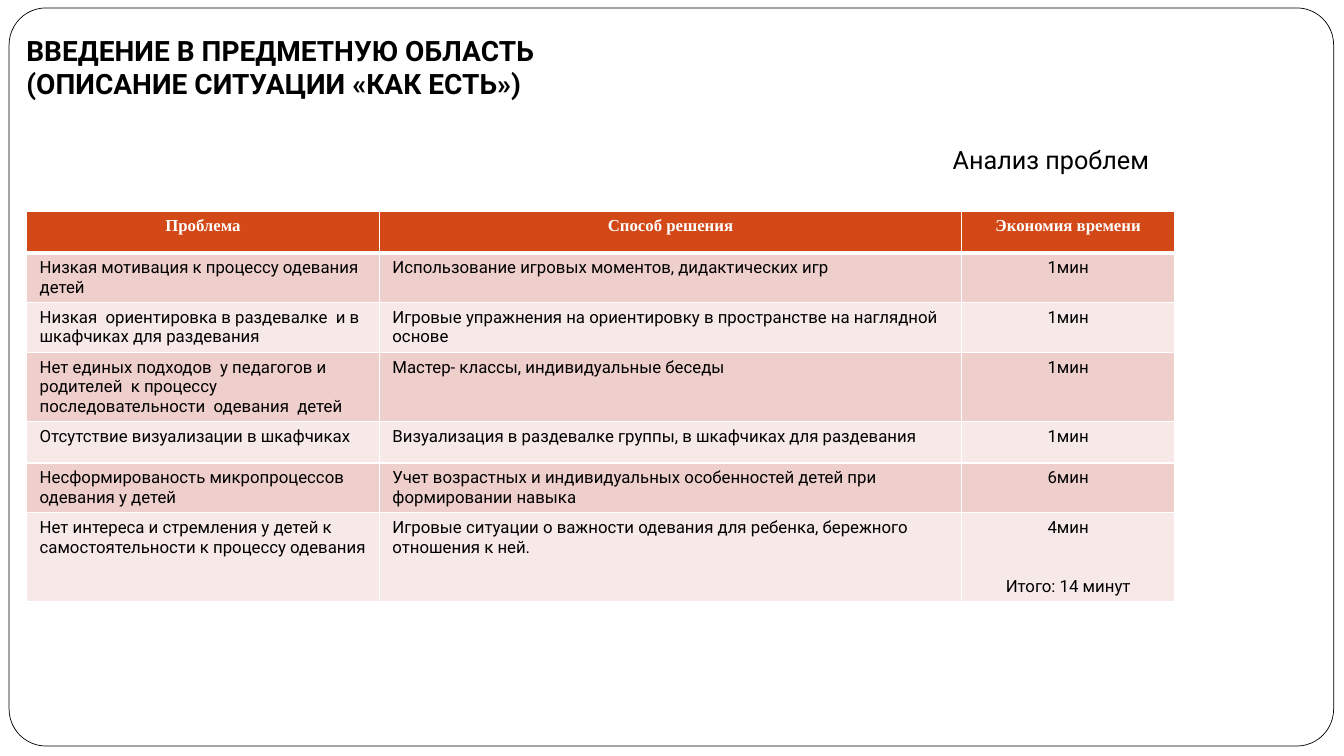
"""Build the slide that lists problems, solutions and time saved."""
from lxml import etree
from pptx import Presentation
from pptx.dml.color import RGBColor
from pptx.enum.shapes import MSO_SHAPE
from pptx.enum.text import MSO_ANCHOR, MSO_AUTO_SIZE, PP_ALIGN
from pptx.oxml.ns import qn
from pptx.util import Cm, Pt

ROUND = MSO_SHAPE.ROUNDED_RECTANGLE
MIDDLE, TOP = MSO_ANCHOR.MIDDLE, MSO_ANCHOR.TOP
NO_FIT = MSO_AUTO_SIZE.NONE
LEFT, CENTER, RIGHT = PP_ALIGN.LEFT, PP_ALIGN.CENTER, PP_ALIGN.RIGHT

TITLE = ["ВВЕДЕНИЕ В ПРЕДМЕТНУЮ ОБЛАСТЬ", "(ОПИСАНИЕ СИТУАЦИИ «КАК ЕСТЬ»)"]
TOPIC = "Анализ проблем"
TOTAL = "Итого: 14 минут"
ROWS = [
    ("Проблема", "Способ решения", "Экономия времени"),
    ("Низкая мотивация к процессу одевания детей",
     "Использование игровых моментов, дидактических игр", "1мин"),
    ("Низкая  ориентировка в раздевалке  и в шкафчиках для раздевания",
     "Игровые упражнения на ориентировку в пространстве на наглядной основе",
     "1мин"),
    ("Нет единых подходов  у педагогов и родителей  к процессу  "
     "последовательности  одевания  детей",
     "Мастер- классы, индивидуальные беседы", "1мин"),
    ("Отсутствие визуализации в шкафчиках",
     "Визуализация в раздевалке группы, в шкафчиках для раздевания", "1мин"),
    ("Несформированость микропроцессов одевания у детей",
     "Учет возрастных и индивидуальных особенностей детей при "
     "формировании навыка", "6мин"),
    ("Нет интереса и стремления у детей к самостоятельности к процессу "
     "одевания",
     "Игровые ситуации о важности одевания для ребенка, бережного "
     "отношения к ней.", "4мин"),
]
WIDTHS = [8.89, 14.68, 5.36]
HEIGHTS = [1.04, 1.04, 1.12, 1.04, 1.04, 1.19, 1.04]

THEME = {
    "white": RGBColor.from_string("FFFFFF"),
    "black": RGBColor.from_string("000000"),
    "head": RGBColor.from_string("D34817"),
    "bands": [RGBColor.from_string("F7E9E8"), RGBColor.from_string("EFCFCC")],
    "title": {"name": "Roboto", "size": Pt(20), "bold": True},
    "topic": {"name": "Roboto", "size": Pt(18), "bold": False},
    "label": {"name": "Times New Roman", "size": Pt(12), "bold": True},
    "cell": {"name": "Roboto", "size": Pt(12), "bold": False},
}


def apply(item, values):
    """Set each named value on the item."""
    for name, value in values.items():
        setattr(item, name, value)


def style(para, kind, align, color="black"):
    """Format a paragraph in one of the theme's text styles."""
    para.alignment = align
    apply(para.font, THEME[kind])
    para.font.color.rgb = THEME[color]


def edge(cell, side, width):
    """Draw one white border of a cell."""
    line = etree.SubElement(cell._tc.get_or_add_tcPr(), qn("a:ln" + side),
                            w=str(Pt(width)))
    fill = etree.SubElement(line, qn("a:solidFill"))
    etree.SubElement(fill, qn("a:srgbClr"), val=str(THEME["white"]))


def add_card(slide):
    """Add the rounded frame of the slide."""
    card = slide.shapes.add_shape(ROUND, Cm(0.23), Cm(0.2), Cm(33.38), Cm(18.6))
    card.adjustments[0] = 0.05
    card.shadow.inherit = False
    card.fill.solid()
    card.fill.fore_color.rgb = THEME["white"]
    card.line.color.rgb = THEME["black"]
    card.line.width = Pt(0.5)


def add_grid(slide):
    """Add the table of problems."""
    frame = slide.shapes.add_table(len(ROWS), len(WIDTHS), Cm(0.67), Cm(5.33),
                                   Cm(sum(WIDTHS)), Cm(sum(HEIGHTS)))
    grid = frame.table
    grid.horz_banding = False
    for col, width in zip(grid.columns, WIDTHS):
        col.width = Cm(width)
    for r, (texts, height) in enumerate(zip(ROWS, HEIGHTS)):
        grid.rows[r].height = Cm(height)
        for c, text in enumerate(texts):
            cell = grid.cell(r, c)
            apply(cell, {"margin_left": Cm(0.33), "margin_right": Cm(0.33),
                         "margin_top": Cm(0.13), "margin_bottom": Cm(0.13),
                         "vertical_anchor": TOP})
            for side in "LRTB":
                thick = (r, side) in [(0, "B"), (1, "T")]
                edge(cell, side, 3 if thick else 1)
            cell.fill.solid()
            cell.fill.fore_color.rgb = THEME["bands"][r % 2] if r else THEME["head"]
            cell.text = text
            para = cell.text_frame.paragraphs[0]
            if r:
                style(para, "cell", CENTER if c == 2 else LEFT)
            else:
                style(para, "label", CENTER, "white")
    last = grid.cell(len(ROWS) - 1, 2).text_frame.add_paragraph()
    last.text = TOTAL
    last.space_before = Pt(28)
    style(last, "cell", CENTER)


def add_topic(slide):
    """Add the heading above the table."""
    box = slide.shapes.add_textbox(Cm(20.93), Cm(3.51), Cm(8.28), Cm(1.02))
    box.text_frame.word_wrap = True
    box.text_frame.text = TOPIC
    style(box.text_frame.paragraphs[0], "topic", RIGHT)
    return box


def set_title(slide, below):
    """Fill the title and place it in front of the given shape."""
    title = slide.shapes.title
    apply(title, {"left": Cm(0.41), "top": Cm(1.12),
                  "width": Cm(32.18), "height": Cm(2.34)})
    frame = title.text_frame
    apply(frame, {"word_wrap": True, "auto_size": NO_FIT,
                  "vertical_anchor": MIDDLE,
                  "margin_top": 0, "margin_bottom": Cm(1.22)})
    para = frame.paragraphs[0]
    for i, text in enumerate(TITLE):
        if i:
            para.add_line_break()
        para.add_run().text = text
    style(para, "title", LEFT)
    below.element.addnext(title.element)


def main():
    """Build and save the deck."""
    deck = Presentation()
    deck.slide_width, deck.slide_height = Cm(33.87), Cm(19.05)
    slide = deck.slides.add_slide(deck.slide_layouts[5])
    add_card(slide)
    add_grid(slide)
    set_title(slide, add_topic(slide))
    deck.save("out.pptx")


if __name__ == "__main__":
    main()
